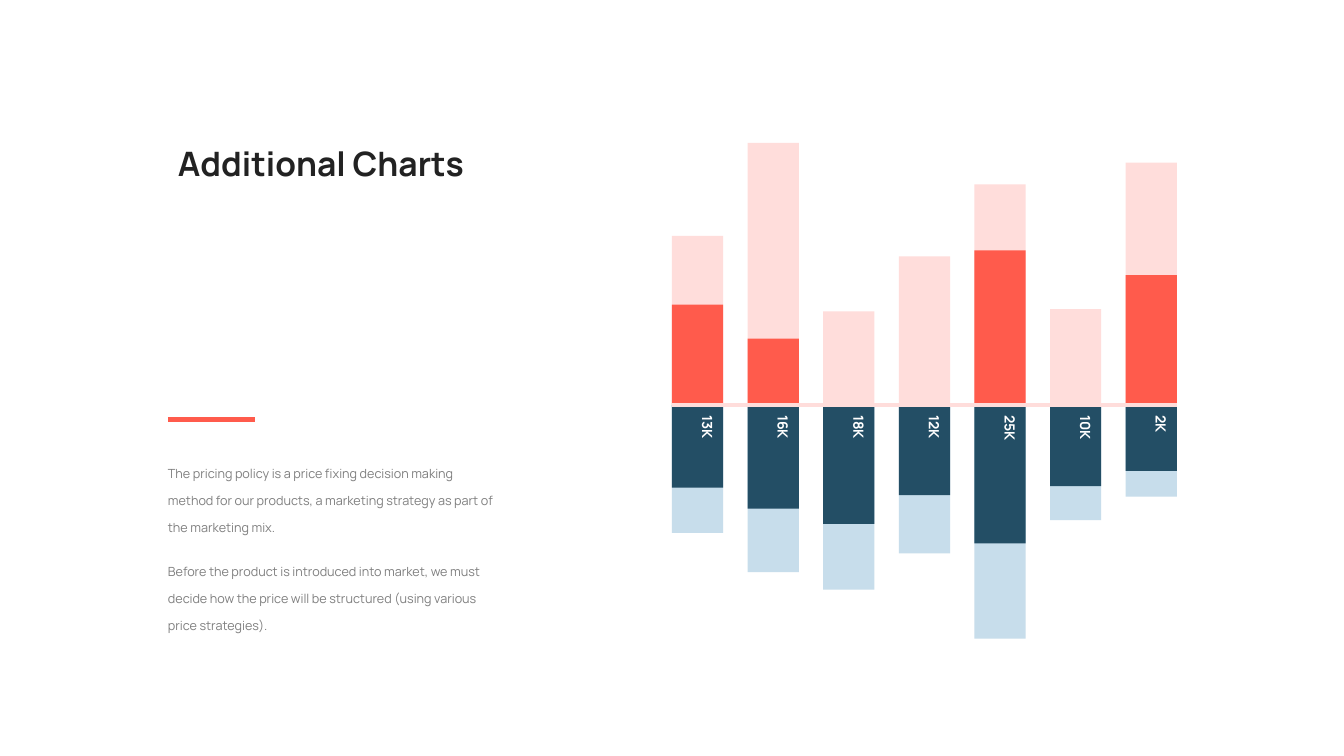
from lxml.etree import SubElement
from pptx import Presentation
from pptx.dml.color import RGBColor
from pptx.enum.shapes import MSO_CONNECTOR as Link, MSO_SHAPE as Shape
from pptx.enum.text import MSO_ANCHOR as Anchor
from pptx.oxml.ns import qn
from pptx.util import Inches, Pt

INK = RGBColor(0x22, 0x22, 0x22)
GRAY = RGBColor(0x7F, 0x7F, 0x7F)
WHITE = RGBColor(0xFF, 0xFF, 0xFF)
RED = RGBColor(0xFF, 0x5B, 0x4C)
PINK = RGBColor(0xFF, 0xDD, 0xDB)
NAVY = RGBColor(0x23, 0x4E, 0x65)
BLUE = RGBColor(0xC7, 0xDD, 0xEB)

# Bar layout in grid units
LEFT, BASE, STEP, WIDE = 8, 5.36, 0.9, 0.61

# Label, then bar lengths in rows: pink and red up, blue and navy down
BARS = [
    ("13K", 2.24, 1.33, 1.69, 1.09),
    ("16K", 3.47, 0.88, 2.21, 1.37),
    ("18K", 1.24, 0, 2.44, 1.57),
    ("12K", 1.97, 0, 1.96, 1.19),
    ("25K", 2.92, 2.05, 3.09, 1.83),
    ("10K", 1.27, 0, 1.52, 1.07),
    ("2K", 3.21, 1.72, 1.21, 0.87),
]

STORY = [
    "The pricing policy is a price fixing decision making method for our products, "
    "a marketing strategy as part of the marketing mix.",
    "Before the product is introduced into market, we must decide how the price "
    "will be structured (using various price strategies).",
]


class Page:
    """A slide on a grid of 16 columns and 10 rows."""
    font = "Manrope"

    def __init__(self, deck):
        self.col = deck.slide_width / 16
        self.row = deck.slide_height / 10
        self.shapes = deck.slides.add_slide(deck.slide_layouts[6]).shapes

    def place(self, x, y, w, h):
        return (round(x * self.col), round(y * self.row),
                round(w * self.col), round(h * self.row))

    def bar(self, x, y, w, h, color):
        bar = self.shapes.add_shape(Shape.RECTANGLE, *self.place(x, y, w, h))
        bar.shadow.inherit = False
        bar.fill.solid()
        bar.fill.fore_color.rgb = color
        bar.line.fill.background()

    def rule(self, x, y, end, color, size):
        a, b, w, _ = self.place(x, y, end - x, 0)
        rule = self.shapes.add_connector(Link.STRAIGHT, a, b, a + w, b)
        rule.line.color.rgb = color
        rule.line.width = Pt(size)
        SubElement(rule._element.spPr, qn("a:effectLst"))

    def text(self, spot, lines, size, color, bold=False, pad=(0, 0, 0, 0),
             lead=1, gap=0):
        box = self.shapes.add_textbox(*spot)
        frame = box.text_frame
        frame.word_wrap = True
        (frame.margin_left, frame.margin_top,
         frame.margin_right, frame.margin_bottom) = map(Inches, pad)
        frame.text = "\n".join(lines)
        for i, para in enumerate(frame.paragraphs):
            para.line_spacing = lead
            if i:
                para.space_before = Pt(gap)
            for run in para.runs:
                font = run.font
                font.name, font.size, font.bold = self.font, Pt(size), bold
                font.color.rgb = color
        return box

    def label(self, x, y, w, h, text):
        """Text turned a quarter to run down the given area."""
        a, b, wide, high = self.place(x, y, w, h)
        shift = (wide - high) // 2
        box = self.text((a + shift, b - shift, high, wide), [text], 10, WHITE,
                        True, (0.1, 0, 0, 0.2))
        box.rotation = 90
        box.text_frame.vertical_anchor = Anchor.MIDDLE


def main():
    deck = Presentation()
    deck.slide_width, deck.slide_height = Inches(13.33), Inches(7.5)
    page = Page(deck)

    # Bars above and below the base line
    for i, (name, pink, red, blue, navy) in enumerate(BARS):
        x = LEFT + i * STEP
        for size, color in ((pink, PINK), (red, RED)):
            if size:
                page.bar(x, BASE - size, WIDE, size, color)
        for size, color in ((blue, BLUE), (navy, NAVY)):
            page.bar(x, BASE, WIDE, size, color)
        page.label(x, BASE, WIDE, navy, name)
    page.rule(LEFT, BASE, LEFT + 6 * STEP + WIDE, PINK, 3)

    # Title, accent and story
    page.text(page.place(2, 1.83, 6, 1.49), ["Additional Charts"], 24, INK,
              True, (0.1, 0.05, 0.1, 0.05))
    page.rule(2, 5.55, 3.04, RED, 4)
    page.text(page.place(2, 6.01, 3.91, 2.52), STORY, 9, GRAY, lead=1.78, gap=12)

    deck.save("out.pptx")


if __name__ == "__main__":
    main()
